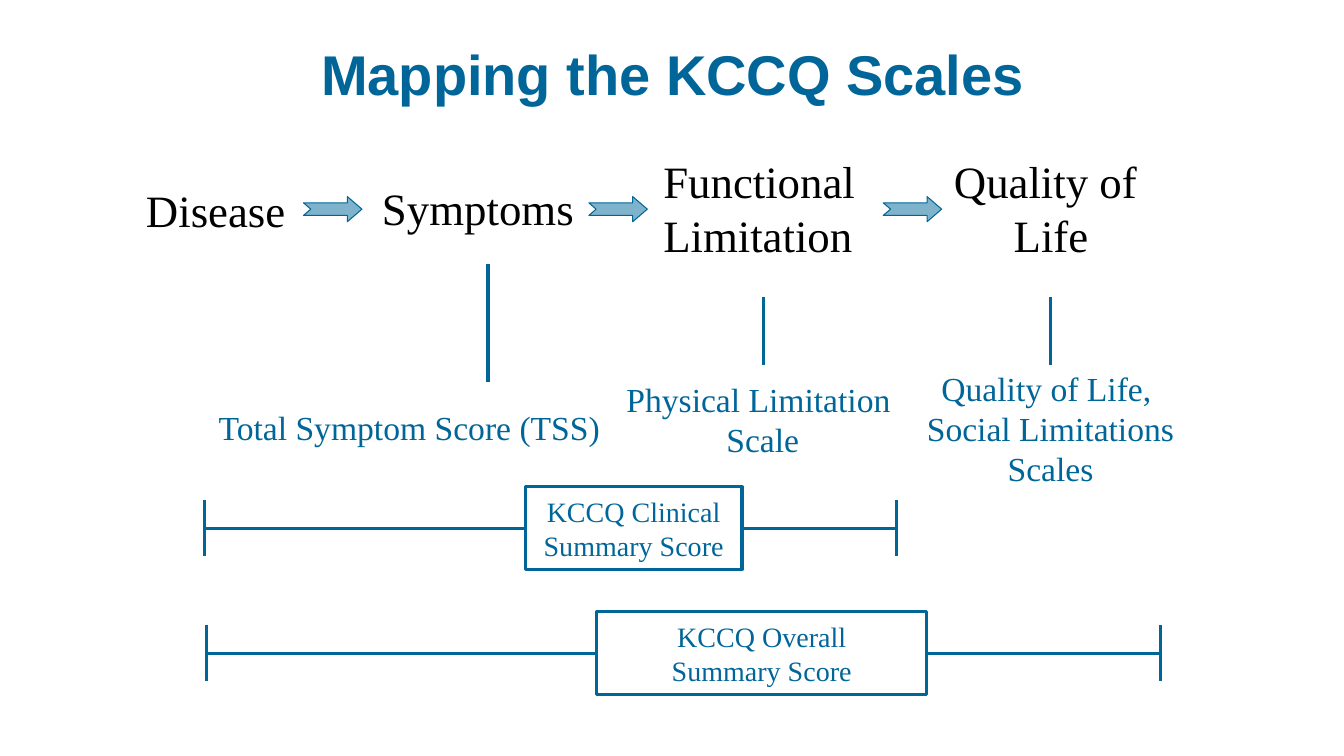
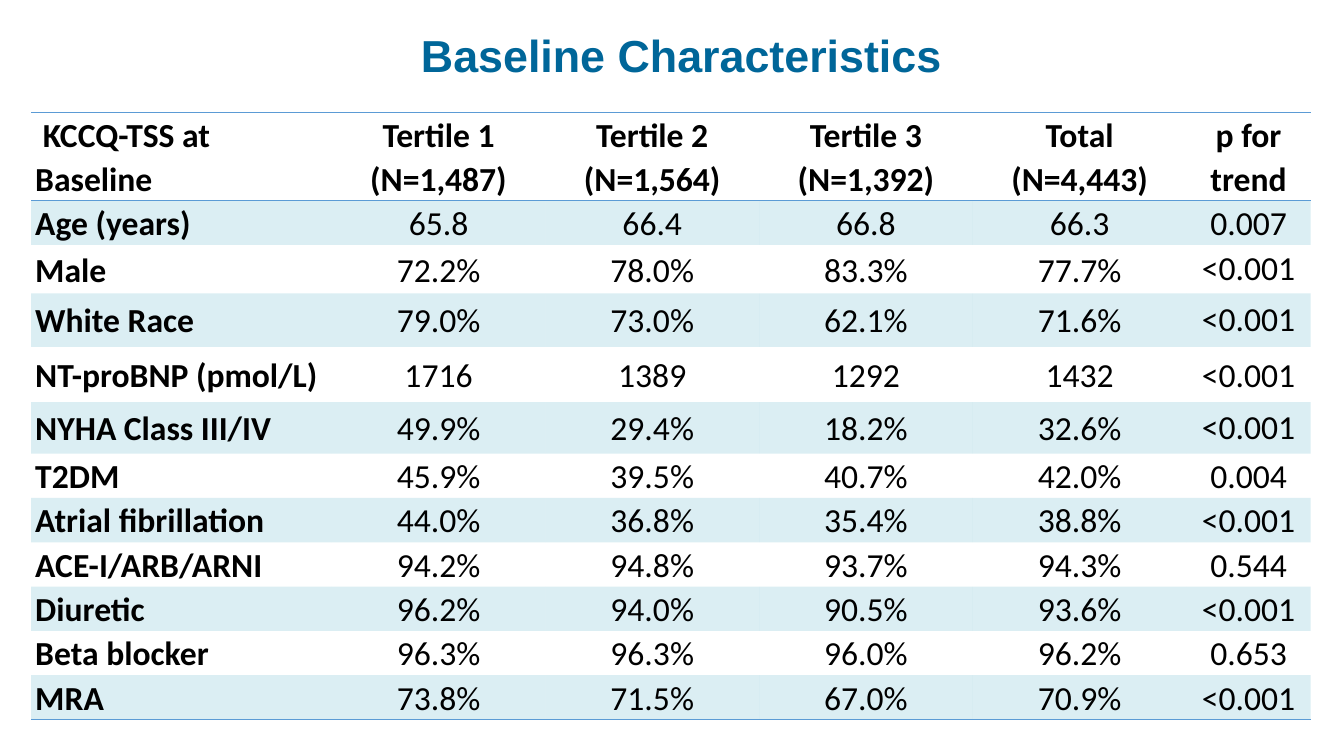
from dataclasses import dataclass

from lxml.etree import SubElement
from pptx import Presentation
from pptx.dml.color import RGBColor as RGB
from pptx.enum.shapes import MSO_CONNECTOR as CONN, MSO_SHAPE as SHAPE
from pptx.enum.text import MSO_ANCHOR as ANCHOR, MSO_AUTO_SIZE as AUTO, PP_ALIGN as ALIGN
from pptx.oxml import parse_xml
from pptx.oxml.ns import nsdecls, qn
from pptx.util import Inches, Pt


@dataclass(frozen=True)
class Theme:
    blue: str = "006699"
    black: str = "000000"
    band: str = "4BACC6"
    rule: str = "5B9BD5"
    title_font: str = "Arial"
    diagram_font: str = "Times New Roman"
    table_font: str = "Calibri"
    stage_size: int = 32
    scale_size: int = 24
    score_size: int = 20
    table_size: int = 24
    line_width: float = 2.25


T = Theme()
NO_GRID_STYLE = "{2D5ABB26-0587-4C30-8999-92F81FD0307C}"

# Stages: text, box, alignment
STAGES = [
    ("Disease", (1.35, 1.76, 1.6, 0.64), ALIGN.LEFT),
    ("Symptoms", (3.69, 1.74, 2.12, 0.64), ALIGN.LEFT),
    ("Functional\nLimitation", (6.48, 1.48, 2.12, 1.18), ALIGN.LEFT),
    ("Quality of \nLife", (9.35, 1.48, 2.15, 1.18), ALIGN.CENTER),
]
ARROW_LEFTS = (3.01, 5.84, 8.76)
# Scales: text, box, alignment, wrap, then x, top and bottom of the link to the stage
SCALES = [
    ("Total Symptom Score (TSS)", (2.07, 3.99, 4, 0.5), ALIGN.LEFT, True, (4.84, 2.62, 3.79)),
    ("Physical Limitation \nScale", (6.1, 3.7, 2.93, 0.91), ALIGN.CENTER, False, (7.57, 2.95, 3.62)),
    ("Quality of Life, \nSocial Limitations\nScales", (9.07, 3.59, 2.7, 1.31), ALIGN.CENTER, False,
     (10.42, 2.95, 3.62)),
]
# Summary scores: text, box, left and right end of the span
SCORES = [
    ("KCCQ Clinical Summary Score", (5.21, 4.83, 2.15, 0.82), 2.03, 8.89),
    ("KCCQ Overall\vSummary Score", (5.92, 6.07, 3.27, 0.82), 2.05, 11.51),
]

HEADER = [" KCCQ-TSS at Baseline", "Tertile 1\n(N=1,487)", "Tertile 2\n(N=1,564)",
          "Tertile 3\n(N=1,392)", "Total\n(N=4,443)", "p for trend"]
ROWS = [
    ["Age (years)", "65.8", "66.4", "66.8", "66.3", "0.007"],
    ["Male", "72.2%", "78.0%", "83.3%", "77.7%", "<0.001"],
    ["White Race", "79.0%", "73.0%", "62.1%", "71.6%", "<0.001"],
    ["NT-proBNP (pmol/L)", "1716", "1389", "1292", "1432", "<0.001"],
    ["NYHA Class III/IV", "49.9%", "29.4%", "18.2%", "32.6%", "<0.001"],
    ["T2DM", "45.9%", "39.5%", "40.7%", "42.0%", "0.004"],
    ["Atrial fibrillation", "44.0%", "36.8%", "35.4%", "38.8%", "<0.001"],
    ["ACE-I/ARB/ARNI", "94.2%", "94.8%", "93.7%", "94.3%", "0.544"],
    ["Diuretic", "96.2%", "94.0%", "90.5%", "93.6%", "<0.001"],
    ["Beta blocker", "96.3%", "96.3%", "96.0%", "96.2%", "0.653"],
    ["MRA", "73.8%", "71.5%", "67.0%", "70.9%", "<0.001"],
]
COL_WIDTHS = [2.98] + [2.12] * 4 + [1.23]
ROW_HEIGHTS = [0.86, 0.44, 0.48, 0.53, 0.55, 0.51] + [0.44] * 6
SINGLE_SPACED_P = {"Male", "White Race", "NYHA Class III/IV"}


def inches(*values):
    return [Inches(v) for v in values]


def color(hex_value):
    return RGB.from_string(hex_value)


def write(tf, text, font, size, hex_value, align, bold=False, spacing=None):
    tf.text = text
    for p in tf.paragraphs:
        p.alignment = align
        p.line_spacing = spacing
        for r in p.runs:
            r.font.name, r.font.size, r.font.bold = font, Pt(size), bold
            r.font.color.rgb = color(hex_value)


def fill_tint(fill, element, hex_value, percent):
    fill.solid()
    fill.fore_color.rgb = color(hex_value)
    clr = element.find(qn("a:solidFill")).find(qn("a:srgbClr"))
    SubElement(clr, qn("a:alpha")).set("val", str(percent * 1000))


def add_title_slide(prs, title, box, size):
    slide = prs.slides.add_slide(prs.slide_layouts[5])
    sp = slide.shapes.title
    sp.left, sp.top, sp.width, sp.height = inches(*box)
    tf = sp.text_frame
    tf.auto_size, tf.vertical_anchor = AUTO.NONE, ANCHOR.MIDDLE
    write(tf, title, T.title_font, size, T.blue, ALIGN.CENTER, bold=True, spacing=0.9)
    return slide


def add_label(slide, text, box, size, hex_value, align, anchor=ANCHOR.TOP, wrap=False):
    tf = slide.shapes.add_textbox(*inches(*box)).text_frame
    tf.word_wrap, tf.auto_size, tf.vertical_anchor = wrap, AUTO.SHAPE_TO_FIT_TEXT, anchor
    write(tf, text, T.diagram_font, size, hex_value, align)


def add_line(slide, x1, y1, x2, y2):
    line = slide.shapes.add_connector(CONN.STRAIGHT, *inches(x1, y1, x2, y2))
    line.line.color.rgb = color(T.blue)
    line.line.width = Pt(T.line_width)
    SubElement(line._element.spPr, qn("a:effectLst"))
    return line


def add_arrow(slide, left, top, width=0.58, height=0.25):
    sp = slide.shapes.add_shape(SHAPE.NOTCHED_RIGHT_ARROW, *inches(left, top, width, height))
    sp.shadow.inherit = False
    sp.adjustments[0], sp.adjustments[1] = 0.5, 0.58
    fill_tint(sp.fill, sp._element.spPr, T.blue, 50)
    sp.line.color.rgb = color(T.blue)
    sp.line.width = Pt(0.75)


def add_score(slide, text, box, start, end, cap=0.55):
    """Boxed score in the middle of a span with a cap at each end."""
    left, top, width, height = box
    sp = slide.shapes.add_shape(SHAPE.RECTANGLE, *inches(*box))
    sp.shadow.inherit = False
    sp.fill.background()
    sp.line.color.rgb = color(T.blue)
    sp.line.width = Pt(T.line_width)
    sp.text_frame.word_wrap = True
    sp.text_frame.vertical_anchor = ANCHOR.MIDDLE
    write(sp.text_frame, text, T.diagram_font, T.score_size, T.blue, ALIGN.CENTER)
    mid = top + height / 2
    for x, side_x, site in ((start, left, 1), (end, left + width, 3)):
        add_line(slide, x, mid - cap / 2, x, mid + cap / 2)
        add_line(slide, x, mid, side_x, mid).end_connect(sp, site)


def add_border(cell, tag):
    tc_pr = cell._tc.get_or_add_tcPr()
    return tc_pr, parse_xml(
        f'<a:{tag} {nsdecls("a")} w="12700"><a:solidFill><a:srgbClr val="{T.rule}"/>'
        f'</a:solidFill></a:{tag}>')


def format_cell(cell, text, banded, borders, align, bold, spacing):
    cell.margin_left = cell.margin_right = Inches(0.04)
    cell.margin_top = cell.margin_bottom = 0
    cell.vertical_anchor = ANCHOR.MIDDLE
    write(cell.text_frame, text, T.table_font, T.table_size, T.black, align, bold, spacing)
    if banded:
        fill_tint(cell.fill, cell._tc.get_or_add_tcPr(), T.band, 20)
    else:
        cell.fill.background()
    for i, tag in enumerate(borders):
        tc_pr, border = add_border(cell, tag)
        tc_pr.insert(i, border)


def add_baseline_table(slide, box):
    rows = [HEADER] + ROWS
    table = slide.shapes.add_table(len(rows), len(HEADER), *inches(*box)).table
    table.first_row = table.horz_banding = False
    table._tbl.tblPr.find(qn("a:tableStyleId")).text = NO_GRID_STYLE
    for col, width in zip(table.columns, COL_WIDTHS):
        col.width = Inches(width)
    for row, height in zip(table.rows, ROW_HEIGHTS):
        row.height = Inches(height)
    last = len(rows) - 1
    for i, values in enumerate(rows):
        borders = {0: ("lnT", "lnB"), last: ("lnB",)}.get(i, ())
        for j, text in enumerate(values):
            single = values[0] in SINGLE_SPACED_P and j == len(values) - 1
            format_cell(table.cell(i, j), text, i % 2 == 1, borders,
                        ALIGN.CENTER if j else ALIGN.LEFT, i == 0 or j == 0,
                        1.0 if single else 1.07)


def build_scales_slide(prs):
    slide = add_title_slide(prs, "Mapping the KCCQ Scales", (0.67, 0.08, 12, 1.38), 40)
    # Chain of stages
    for text, box, align in STAGES:
        add_label(slide, text, box, T.stage_size, T.black, align)
    for left in ARROW_LEFTS:
        add_arrow(slide, left, 1.95)
    # Scale under each stage
    for text, box, align, wrap, (x, top, bottom) in SCALES:
        add_line(slide, x, top, x, bottom)
        add_label(slide, text, box, T.scale_size, T.blue, align, ANCHOR.MIDDLE, wrap)
    # Summary scores
    for score in SCORES:
        add_score(slide, *score)


def build_baseline_slide(prs):
    slide = add_title_slide(prs, "Baseline Characteristics", (0.72, 0.09, 12.08, 0.98), 32)
    add_baseline_table(slide, (0.31, 1.12, 12.7, 6.03))


def main():
    prs = Presentation()
    prs.slide_width, prs.slide_height = inches(13.33, 7.5)
    build_scales_slide(prs)
    build_baseline_slide(prs)
    prs.save("out.pptx")


if __name__ == "__main__":
    main()
